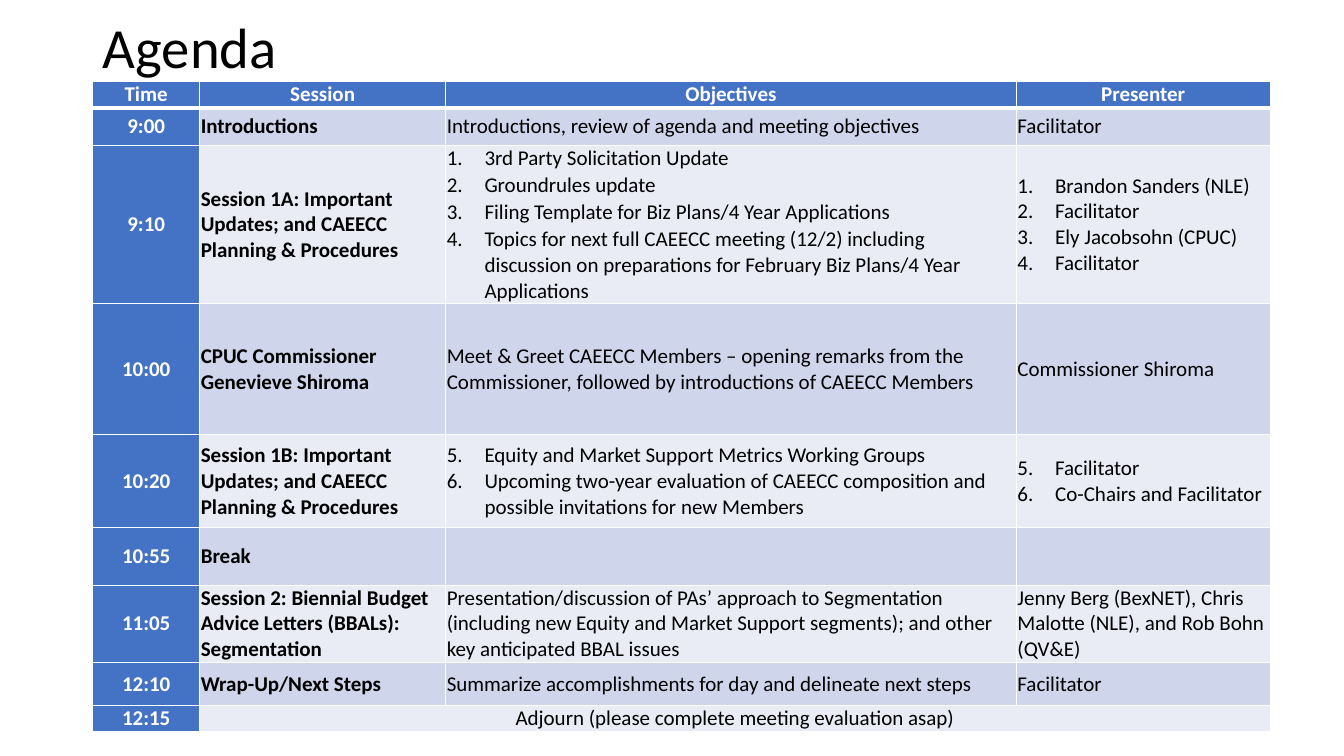
"""Build the meeting agenda slide."""
import dataclasses

import lxml.etree
import pptx
import pptx.dml.color
import pptx.enum.text
import pptx.oxml.ns
import pptx.table
import pptx.text.text
import pptx.util

Cm = pptx.util.Cm
Pt = pptx.util.Pt
RGBColor = pptx.dml.color.RGBColor
Align = pptx.enum.text.PP_ALIGN
Anchor = pptx.enum.text.MSO_ANCHOR

WHITE = RGBColor(0xFF, 0xFF, 0xFF)
BLACK = RGBColor(0x00, 0x00, 0x00)
BLUE = RGBColor(0x44, 0x72, 0xC4)
DARK = RGBColor(0xCF, 0xD5, 0xEA)
LIGHT = RGBColor(0xE9, 0xEB, 0xF5)

HEADS = ("Time", "Session", "Objectives", "Presenter")
WIDTHS = (2.69, 6.2, 14.38, 6.4)
HEAD_TALL = 0.66


@dataclasses.dataclass(frozen=True)
class Slot:
    time: str
    topic: str
    goals: str
    host: str
    tall: float
    start: int = 0
    gap: float = 0


SLOTS = (
    Slot("9:00", "Introductions",
         "Introductions, review of agenda and meeting objectives",
         "Facilitator", 0.94),
    Slot("9:10", "Session 1A: Important Updates; and CAEECC Planning & Procedures",
         "3rd Party Solicitation Update\nGroundrules update\n"
         "Filing Template for Biz Plans/4 Year Applications\n"
         "Topics for next full CAEECC meeting (12/2) including discussion on "
         "preparations for February Biz Plans/4 Year Applications",
         "Brandon Sanders (NLE)\nFacilitator\nEly Jacobsohn (CPUC)\nFacilitator",
         3.98, start=1, gap=0.5),
    Slot("10:00", "CPUC Commissioner Genevieve Shiroma",
         "Meet & Greet CAEECC Members – opening remarks from the Commissioner, "
         "followed by introductions of CAEECC Members",
         "Commissioner Shiroma", 3.3),
    Slot("10:20", "Session 1B: Important Updates; and CAEECC Planning & Procedures",
         "Equity and Market Support Metrics Working Groups\n"
         "Upcoming two-year evaluation of CAEECC composition and possible "
         "invitations for new Members",
         "Facilitator\nCo-Chairs and Facilitator", 2.34, start=5),
    Slot("10:55", "Break", "", "", 1.45),
    Slot("11:05", "Session 2: Biennial Budget Advice Letters (BBALs): Segmentation",
         "Presentation/discussion of PAs’ approach to Segmentation (including new "
         "Equity and Market Support segments); and other key anticipated BBAL issues",
         "Jenny Berg (BexNET), Chris Malotte (NLE), and Rob Bohn (QV&E)", 1.94),
    Slot("12:10", "Wrap-Up/Next Steps",
         "Summarize accomplishments for day and delineate next steps",
         "Facilitator", 1.09),
    Slot("12:15", "Adjourn (please complete meeting evaluation asap)", "", "", 0.65),
)


def write(frame: pptx.text.text.TextFrame, text: str, *, size: float = 15,
          color: RGBColor = BLACK, bold: bool = False, align: Align = Align.LEFT,
          gap: float = 0.5, lead: float = 1.0, start: int = 0) -> None:
    for rank, line in enumerate(text.split("\n")):
        para = frame.add_paragraph() if rank else frame.paragraphs[0]
        para.alignment = align
        para.line_spacing = lead
        para.space_before = para.space_after = Pt(gap)
        if start:
            props = para._p.get_or_add_pPr()
            props.set("marL", str(Cm(0.95)))
            props.set("indent", str(-Cm(0.95)))
            mark = lxml.etree.SubElement(props, pptx.oxml.ns.qn("a:buAutoNum"))
            mark.set("type", "arabicPeriod")
            mark.set("startAt", str(start))
        run = para.add_run()
        run.text = line
        run.font.name = "Calibri"
        run.font.size = Pt(size)
        run.font.bold = bold
        run.font.color.rgb = color


def dress(cell: pptx.table._Cell, fill: RGBColor, base: float = 1) -> None:
    cell.margin_left = cell.margin_right = Cm(0.03)
    cell.margin_top = cell.margin_bottom = 0
    cell.vertical_anchor = Anchor.MIDDLE
    props = cell._tc.get_or_add_tcPr()
    for side, width in zip("LRTB", (1, 1, 1, base)):
        edge = lxml.etree.SubElement(props, pptx.oxml.ns.qn(f"a:ln{side}"))
        edge.set("w", str(Pt(width)))
        paint = lxml.etree.SubElement(edge, pptx.oxml.ns.qn("a:solidFill"))
        tint = lxml.etree.SubElement(paint, pptx.oxml.ns.qn("a:srgbClr"))
        tint.set("val", str(WHITE))
    cell.fill.solid()
    cell.fill.fore_color.rgb = fill


def fill_head(table: pptx.table.Table) -> None:
    for col, head in enumerate(HEADS):
        cell = table.cell(0, col)
        dress(cell, BLUE, base=3)
        write(cell.text_frame, head, color=WHITE, bold=True, align=Align.CENTER)


def fill_slot(table: pptx.table.Table, row: int, slot: Slot) -> None:
    cells = [table.cell(row, col) for col in range(len(HEADS))]
    for col, cell in enumerate(cells):
        dress(cell, LIGHT if row % 2 == 0 else DARK)
    cells[0].fill.fore_color.rgb = BLUE
    time, topic, goals, host = (cell.text_frame for cell in cells)
    write(time, slot.time, color=WHITE, bold=True, align=Align.CENTER)
    if row == len(SLOTS):
        cells[1].merge(cells[-1])
        write(topic, slot.topic, align=Align.CENTER)
        return
    write(topic, slot.topic, bold=True)
    if slot.goals:
        write(goals, slot.goals, start=slot.start, gap=slot.gap)
        write(host, slot.host, start=slot.start, gap=0)


def main() -> None:
    deck = pptx.Presentation()
    deck.slide_width, deck.slide_height = Cm(33.87), Cm(19.05)
    slide = deck.slides.add_slide(deck.slide_layouts[5])

    title = slide.shapes.title
    title.left, title.top = Cm(2.34), Cm(0.51)
    title.width, title.height = Cm(29.21), Cm(1.52)
    title.text_frame.auto_size = pptx.enum.text.MSO_AUTO_SIZE.NONE
    title.text_frame.vertical_anchor = Anchor.MIDDLE
    write(title.text_frame, "Agenda", size=40.5, gap=0, lead=0.9)

    talls = [HEAD_TALL] + [slot.tall for slot in SLOTS]
    table = slide.shapes.add_table(
        len(talls), len(HEADS), Cm(2.34), Cm(2.06),
        Cm(sum(WIDTHS)), Cm(sum(talls))).table
    table.first_col = True
    for col, width in zip(table.columns, WIDTHS):
        col.width = Cm(width)
    for row, tall in zip(table.rows, talls):
        row.height = Cm(tall)
    fill_head(table)
    for row, slot in enumerate(SLOTS, 1):
        fill_slot(table, row, slot)
    deck.save("out.pptx")


if __name__ == "__main__":
    main()
